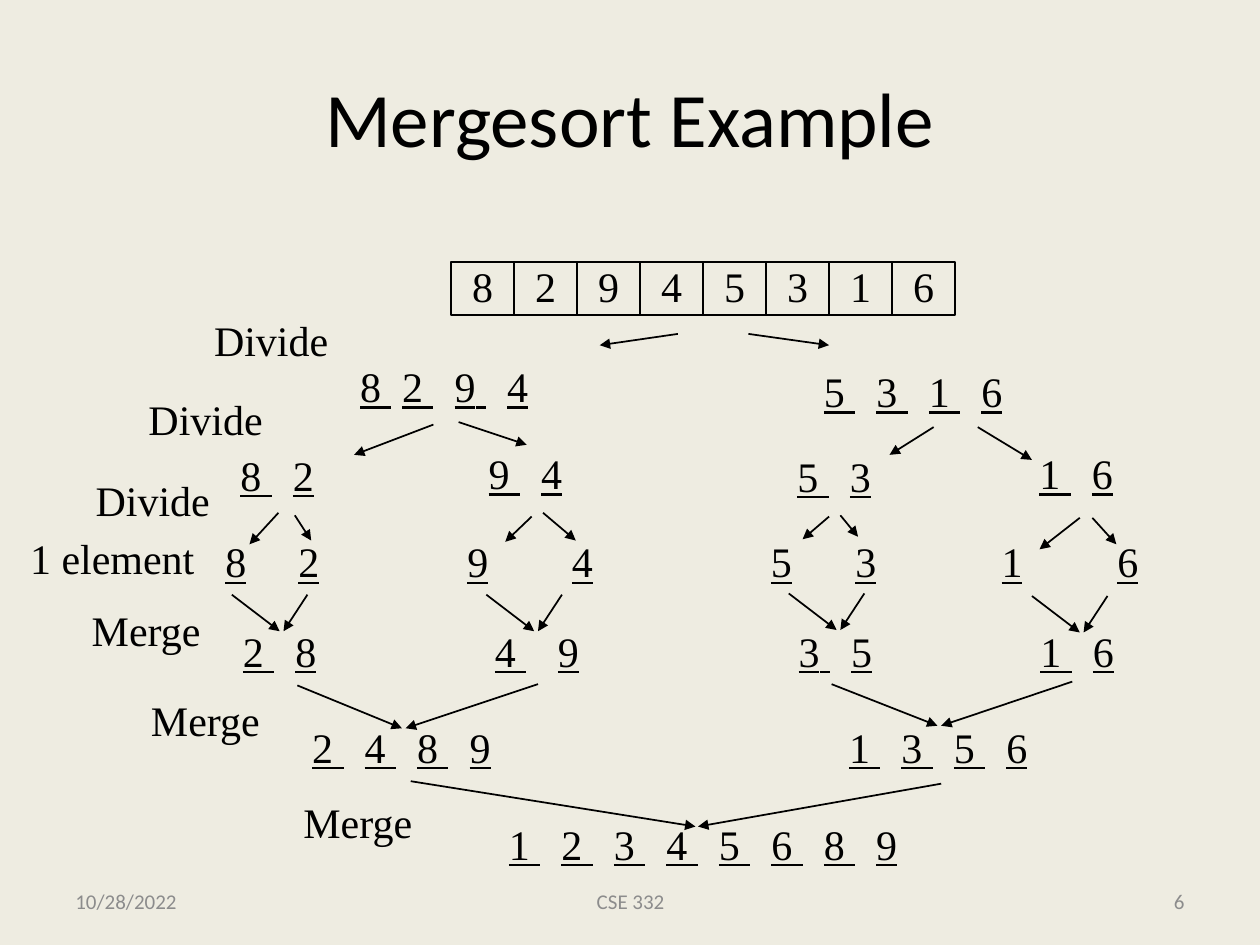
from lxml.etree import SubElement
from pptx import Presentation
from pptx.dml.color import RGBColor
from pptx.enum.shapes import MSO_CONNECTOR, MSO_SHAPE
from pptx.enum.text import MSO_ANCHOR, PP_ALIGN
from pptx.oxml.ns import qn
from pptx.util import Inches, Pt

# Content: all places are in inches
TITLE = "Mergesort Example"
NUMBERS = "82945316"
LABELS = [  # text, left, top, width
    ("Divide", 1.6, 2.49, 1.11), ("Divide", 1.08, 3.12, 1.11),
    ("Divide", 0.66, 3.76, 1.11), ("1 element", 0.14, 4.22, 1.5),
    ("Merge", 0.63, 4.79, 1.07), ("Merge", 1.1, 5.51, 1.07),
    ("Merge", 2.31, 6.32, 1.07),
]
LISTS = [  # left, top, width, [(digits, x of the first digit)]
    (2.76, 2.86, 1.53, [("8294", 2.86)]),
    (6.44, 2.9, 1.62, [("5316", 6.54)]),
    (1.81, 3.56, 0.78, [("82", 1.91)]),
    (8.15, 3.55, 0.78, [("16", 8.25)]),
    (3.78, 3.55, 0.78, [("94", 3.88)]),
    (6.23, 3.57, 0.78, [("53", 6.33)]),
    (1.69, 4.25, 7.45, [("8", 1.79), ("2", 2.37), ("9", 3.71), ("4", 4.54),
                        ("5", 6.12), ("3", 6.79), ("1", 7.95), ("6", 8.87)]),
    (1.58, 4.96, 7.37, [("28", 1.93), ("49", 3.93), ("35", 6.34), ("16", 8.26)]),
    (1.72, 5.72, 6.53, [("2489", 2.48), ("1356", 6.74)]),
    (3.27, 6.49, 3.95, [("12345689", 4.04)]),
]
GAP = 12  # points of letter spacing that widen the space between two digits
FIRST_GAPS = {"8294": 6, "49": 18}  # unusual gap after the first digit
SPLITS = [  # left start, left end, right start, right end
    ((5.38, 2.65), (4.76, 2.74), (5.94, 2.65), (6.58, 2.74)),
    ((3.44, 3.37), (2.81, 3.61), (3.64, 3.35), (4.18, 3.53)),
    ((7.41, 3.39), (7.06, 3.61), (7.76, 3.39), (8.19, 3.65)),
    ((2.21, 4.07), (1.98, 4.32), (2.34, 4.09), (2.47, 4.29)),
    ((4.22, 4.1), (4.01, 4.3), (4.31, 4.07), (4.57, 4.29)),
    ((6.58, 4.1), (6.37, 4.28), (6.67, 4.09), (6.81, 4.26)),
    ((8.57, 4.11), (8.25, 4.36), (8.67, 4.11), (8.86, 4.32)),
]
PAIR_MERGES = [(1.84, 4.72), (3.86, 4.72), (6.26, 4.71), (8.19, 4.73)]
WIDE_MERGES = [
    ((2.36, 5.44), (3.19, 5.78), (4.27, 5.43), (3.22, 5.78)),
    ((6.6, 5.43), (7.44, 5.76), (8.51, 5.41), (7.47, 5.76)),
    ((3.26, 6.2), (5.52, 6.56), (7.47, 6.22), (5.54, 6.56)),
]
FOOTERS = [  # text, left, width, alignment
    ("10/28/2022", 0.5, 2.33, PP_ALIGN.LEFT),
    ("CSE 332", 3.42, 3.17, PP_ALIGN.CENTER),
    ("6", 7.17, 2.33, PP_ALIGN.RIGHT),
]

# Theme
INK = RGBColor(0, 0, 0)
THEME = {
    "background": RGBColor(0xEE, 0xEC, 0xE1),
    "title": {"name": "Calibri", "size": Pt(44), "color": INK},
    "body": {"name": "Times New Roman", "size": Pt(24), "color": INK},
    "footer": {"name": "Calibri", "size": Pt(12), "color": RGBColor(0x8C, 0x8C, 0x8C)},
    "arrow": Pt(1),
    "cell": Pt(0.75),
}
ROW_FRAME = {"word_wrap": True, "margin_right": 0}
MIDDLE_FRAME = {"word_wrap": True, "vertical_anchor": MSO_ANCHOR.MIDDLE}
INSET, ROW_HEIGHT = 0.1, 0.5
CELL_LEFT, CELL_TOP, CELL_WIDTH, CELL_HEIGHT = 3.58, 2.08, 0.5, 0.42

deck = Presentation()
deck.slide_width, deck.slide_height = Inches(10), Inches(7.5)
page = deck.slides.add_slide(deck.slide_layouts[6])
page.background.fill.solid()
page.background.fill.fore_color.rgb = THEME["background"]


def apply(target, values):
    for name, value in values.items():
        setattr(target, name, value)


def add_span(para, text, style, underline=None):
    span = para.add_run()
    span.text = text
    apply(span.font, {"name": style["name"], "size": style["size"], "underline": underline})
    span.font.color.rgb = style["color"]
    return span


def add_box(left, top, width, height, frame_format, para_format):
    box = page.shapes.add_textbox(*map(Inches, (left, top, width, height)))
    apply(box.text_frame, frame_format)
    para = box.text_frame.paragraphs[0]
    apply(para, para_format)
    return para


def add_list(left, top, width, groups):
    """Start each group on a tab stop and join its digits by widened, underlined spaces."""
    para = add_box(left, top, width, ROW_HEIGHT, ROW_FRAME, {"line_spacing": 0.9})
    tabs = SubElement(para._p.get_or_add_pPr(), qn("a:tabLst"))
    for digits, start in groups:
        offset = start - left - INSET
        if offset > 0.01:
            SubElement(tabs, qn("a:tab"), pos=str(Inches(offset)), algn="l")
            add_span(para, "\t", THEME["body"], False)
        for index, digit in enumerate(digits):
            if index:
                gap = FIRST_GAPS.get(digits, GAP) if index == 1 else GAP
                space = add_span(para, " ", THEME["body"], True)
                space._r.get_or_add_rPr().set("spc", str(gap * 100))
            add_span(para, digit, THEME["body"], True)


def add_arrow(start, end):
    arrow = page.shapes.add_connector(MSO_CONNECTOR.STRAIGHT, *map(Inches, start + end))
    arrow.line.color.rgb = INK
    arrow.line.width = THEME["arrow"]
    SubElement(arrow.line._get_or_add_ln(), qn("a:tailEnd"), type="triangle")
    SubElement(arrow._element.spPr, qn("a:effectLst"))


# Title
para = add_box(0.5, 0.3, 9, 1.25, MIDDLE_FRAME, {"alignment": PP_ALIGN.CENTER})
add_span(para, TITLE, THEME["title"])

# Divided and merged lists
for row in LISTS:
    add_list(*row)

# Arrows
pair_arrows = [((x, y), (x + 0.38, y + 0.29), (x + 0.6, y), (x + 0.41, y + 0.29))
               for x, y in PAIR_MERGES]
for left_start, left_end, right_start, right_end in SPLITS + pair_arrows + WIDE_MERGES:
    add_arrow(left_start, left_end)
    add_arrow(right_start, right_end)

# Step labels
for text, left, top, width in LABELS:
    para = add_box(left, top, width, ROW_HEIGHT, ROW_FRAME, {"line_spacing": 0.9})
    add_span(para, text, THEME["body"])

# Input array
for index, number in enumerate(NUMBERS):
    cell = page.shapes.add_shape(
        MSO_SHAPE.RECTANGLE, Inches(CELL_LEFT + index * CELL_WIDTH),
        Inches(CELL_TOP), Inches(CELL_WIDTH), Inches(CELL_HEIGHT))
    cell.shadow.inherit = False
    cell.fill.background()
    cell.line.color.rgb = INK
    cell.line.width = THEME["cell"]
    apply(cell.text_frame, {"word_wrap": False, "vertical_anchor": MSO_ANCHOR.MIDDLE})
    para = cell.text_frame.paragraphs[0]
    apply(para, {"alignment": PP_ALIGN.CENTER, "line_spacing": 0.9})
    add_span(para, number, THEME["body"])

# Footer
for text, left, width, alignment in FOOTERS:
    para = add_box(left, 6.95, width, 0.4, MIDDLE_FRAME, {"alignment": alignment})
    add_span(para, text, THEME["footer"])

deck.save("out.pptx")
